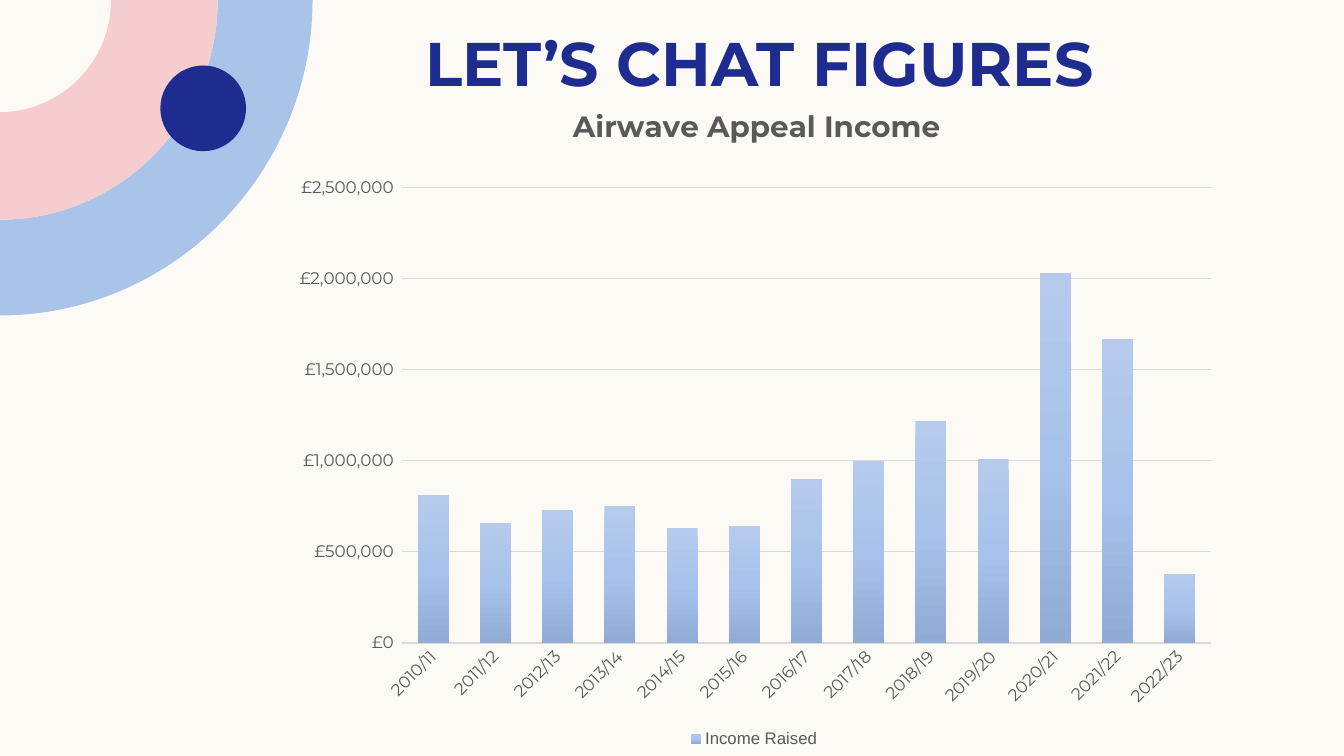
"""Builds a slide with a column chart of yearly appeal income."""
import copy

from pptx import Presentation
from pptx import util as u
from pptx.chart import data as cd
from pptx.dml.color import RGBColor
from pptx.enum import chart as ch, shapes, text
from pptx.oxml import parse_xml
from pptx.oxml.ns import nsdecls

COLORS = {
    "cream": "FDFAF6", "blue": "AAC3E8", "pink": "F5CDCE", "navy": "1F2C8F",
    "grey": "595959", "grid": "D9D9D9",
    "bar_top": "B6CBEC", "bar_mid": "A7C2EB", "bar_base": "90ACD5",
}
INCOME = [810000, 660000, 730000, 750000, 630000, 640000, 900000,
          1000000, 1220000, 1010000, 2030000, 1670000, 380000]
YEARS = [f"20{y}/{y + 1}" for y in range(10, 10 + len(INCOME))]
POUNDS = '"£"#,##0_);[Red]\\("£"#,##0\\)'
CHART_W, CHART_H = 9.41, 6.47
ARC_PULL = 0.55


def rgb(name):
    return RGBColor.from_string(COLORS[name])


def set_font(font, face, size, color, bold=False):
    font.name, font.size, font.bold = face, u.Pt(size), bold
    font.color.rgb = rgb(color)


def paint(sp, color):
    sp.shadow.inherit = False
    sp.fill.solid()
    sp.fill.fore_color.rgb = rgb(color)
    sp.line.fill.background()


def arc(rx, ry):
    corners = [(rx, 0), (rx, ARC_PULL * ry), (ARC_PULL * rx, ry), (0, ry)]
    return [(u.Inches(x), u.Inches(y)) for x, y in corners]


def bend(lines):
    """Turns three straight segments into one curve."""
    curve = parse_xml(f'<a:cubicBezTo {nsdecls("a")}/>')
    lines[0].addprevious(curve)
    for line in lines:
        curve.append(line[0])
        line.getparent().remove(line)


def add_corner_band(s, outer, inner, color):
    points = arc(*outer) + (arc(*inner)[::-1] if inner else [(0, 0)])
    builder = s.shapes.build_freeform(*points[0])
    builder.add_line_segments(points[1:], close=True)
    sp = builder.convert_to_shape()
    lines = sp._element.xpath(".//a:lnTo")
    bend(lines[:3])
    if inner:
        bend(lines[4:7])
    paint(sp, color)


def add_dot(s, x, y, size, color):
    sp = s.shapes.add_shape(shapes.MSO_SHAPE.OVAL, u.Inches(x), u.Inches(y),
                            u.Inches(size), u.Inches(size))
    paint(sp, color)


def add_title(s, words):
    sp = s.shapes.title
    sp.left, sp.top = u.Inches(3.36), u.Inches(0.19)
    sp.width, sp.height = u.Inches(8.35), u.Inches(0.84)
    tf = sp.text_frame
    tf.word_wrap = True
    tf.auto_size = text.MSO_AUTO_SIZE.NONE
    tf.vertical_anchor = text.MSO_ANCHOR.MIDDLE
    p = tf.paragraphs[0]
    p.alignment = text.PP_ALIGN.CENTER
    r = p.add_run()
    r.text = words
    set_font(r.font, "Montserrat", 44, "navy", True)


def place(element, x, y, w=None, h=None):
    """Gives a chart part a manual layout, from inches within the chart."""
    inner = '<c:layoutTarget val="inner"/>' if w else ""
    size = f'<c:w val="{w / CHART_W}"/><c:h val="{h / CHART_H}"/>' if w else ""
    layout = parse_xml(
        f'<c:layout {nsdecls("c")}><c:manualLayout>{inner}'
        '<c:xMode val="edge"/><c:yMode val="edge"/>'
        f'<c:x val="{x / CHART_W}"/><c:y val="{y / CHART_H}"/>{size}'
        '</c:manualLayout></c:layout>')
    for old in element.xpath("./c:layout"):
        element.remove(old)
    before = element.xpath("./c:tx | ./c:legendPos")
    if before:
        before[-1].addnext(layout)
    else:
        element.insert(0, layout)


def fill_gradient(series, names):
    fill = series.format.fill
    fill.gradient()
    fill.gradient_angle = 270
    first = series._element.xpath(".//a:gs")[0]
    first.addnext(copy.deepcopy(first))
    for i, (stop, name) in enumerate(zip(fill.gradient_stops, names)):
        stop.position = i / (len(names) - 1)
        stop.color.rgb = rgb(name)


def style_axes(chart):
    cat, val = chart.category_axis, chart.value_axis
    for axis in (cat, val):
        axis.major_tick_mark = axis.minor_tick_mark = ch.XL_TICK_MARK.NONE
        set_font(axis.tick_labels.font, "Montserrat", 12, "grey")
    cat.format.line.color.rgb = rgb("grid")
    cat.format.line.width = u.Pt(1)
    cat._element.xpath("./c:txPr/a:bodyPr")[0].set("rot", "-2700000")
    val.format.line.fill.background()
    val.minimum_scale, val.maximum_scale, val.major_unit = 0, 2500000, 500000
    val.tick_labels.number_format = POUNDS
    val.tick_labels.number_format_is_linked = False
    val.major_gridlines.format.line.color.rgb = rgb("grid")
    val.major_gridlines.format.line.width = u.Pt(0.75)


def add_income_chart(s):
    data = cd.CategoryChartData(number_format=POUNDS)
    data.categories = YEARS
    data.add_series("Income Raised", INCOME)
    chart = s.shapes.add_chart(
        ch.XL_CHART_TYPE.COLUMN_CLUSTERED, u.Inches(2.78), u.Inches(1),
        u.Inches(CHART_W), u.Inches(CHART_H), data).chart
    chart.font.name, chart.font.size = "Arial", u.Pt(10)
    plot = chart.plots[0]
    plot.gap_width, plot.overlap, plot.vary_by_categories = 100, -24, False
    fill_gradient(plot.series[0], ["bar_top", "bar_mid", "bar_base"])
    style_axes(chart)

    chart.has_title = True
    r = chart.chart_title.text_frame.paragraphs[0].add_run()
    r.text = "Airwave Appeal Income"
    set_font(r.font, "Montserrat", 21, "grey", True)
    chart.chart_title.include_in_layout = False

    chart.has_legend = True
    chart.legend.position = ch.XL_LEGEND_POSITION.BOTTOM
    chart.legend.include_in_layout = False
    set_font(chart.legend.font, "Arial", 12, "grey")

    place(chart.chart_title._element, 2.85, -0.03)
    place(chart.legend._element, 4.02, 6.22)
    place(chart._chartSpace.xpath(".//c:plotArea")[0], 1.21, 0.86, 8.02, 4.52)


def main():
    prs = Presentation()
    prs.slide_width, prs.slide_height = u.Inches(13.33), u.Inches(7.5)
    s = prs.slides.add_slide(prs.slide_layouts[5])
    s.background.fill.solid()
    s.background.fill.fore_color.rgb = rgb("cream")
    radii = [(3.1, 3.13), (2.16, 2.18), (1.1, 1.11), None]
    for outer, inner, color in zip(radii, radii[1:], ["blue", "pink", "cream"]):
        add_corner_band(s, outer, inner, color)
    add_dot(s, 1.59, 0.65, 0.85, "navy")
    add_title(s, "LET’S CHAT FIGURES")
    add_income_chart(s)
    prs.save("out.pptx")


if __name__ == "__main__":
    main()
